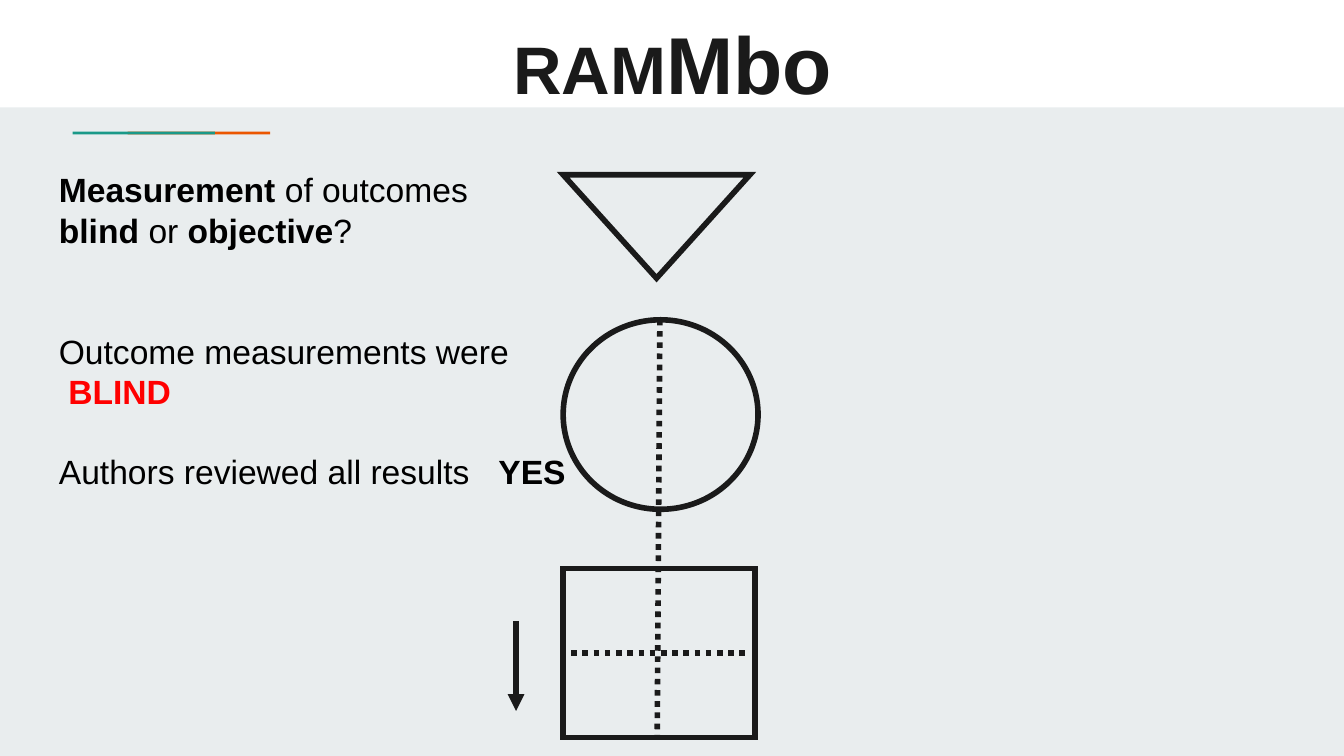
from dataclasses import dataclass

from lxml.etree import SubElement
from pptx import Presentation
from pptx.dml.color import RGBColor
from pptx.enum.dml import MSO_LINE
from pptx.enum.shapes import MSO_CONNECTOR, MSO_SHAPE
from pptx.enum.text import MSO_ANCHOR, PP_ALIGN
from pptx.oxml.ns import qn
from pptx.util import Inches, Pt


@dataclass(frozen=True)
class Theme:
    font: str = "Arial"
    background: str = "E9EDEE"
    band: str = "FFFFFF"
    ink: str = "1A1A1A"
    text: str = "000000"
    answer: str = "FF0000"
    teal: str = "1A9988"
    orange: str = "EB5600"
    title_small: float = 36
    title_large: float = 43.2
    body: float = 18
    stroke: float = 3


THEME = Theme()


def rgb(value):
    return RGBColor.from_string(value)


def add_shape(s, kind, box, fill=None, line=None, rotation=0):
    sp = s.shapes.add_shape(kind, *map(Inches, box))
    sp.shadow.inherit = False
    sp.rotation = rotation
    if fill:
        sp.fill.solid()
        sp.fill.fore_color.rgb = rgb(fill)
    else:
        sp.fill.background()
    if line:
        sp.line.color.rgb = rgb(line)
        sp.line.width = Pt(THEME.stroke)
        SubElement(sp.line._get_or_add_ln(), qn("a:miter"), lim="800000")
    else:
        sp.line.fill.background()
    return sp


def add_line(s, start, end, dash=None, arrow=False):
    sp = s.shapes.add_connector(MSO_CONNECTOR.STRAIGHT, *map(Inches, start + end))
    sp.line.color.rgb = rgb(THEME.ink)
    sp.line.width = Pt(THEME.stroke)
    if dash:
        sp.line.dash_style = dash
    if arrow:
        SubElement(sp.line._get_or_add_ln(), qn("a:tailEnd"), type="triangle")
    SubElement(sp._element.spPr, qn("a:effectLst"))
    return sp


def add_text_box(s, box, anchor=MSO_ANCHOR.TOP, bottom=0.05):
    tf = s.shapes.add_textbox(*map(Inches, box)).text_frame
    tf.word_wrap = True
    tf.vertical_anchor = anchor
    tf.margin_bottom = Inches(bottom)
    return tf


def add_paragraph(tf, align=PP_ALIGN.LEFT, before=0, indent=0, tab=None):
    """Use the frame's empty first paragraph, then append new ones."""
    p = tf.paragraphs[0]
    if p.runs:
        p = tf.add_paragraph()
    p.alignment = align
    p.space_before = Pt(before)
    pPr = p._p.get_or_add_pPr()
    if indent:
        pPr.set("marL", str(Inches(indent)))
    if tab:
        tabs = SubElement(pPr, qn("a:tabLst"))
        SubElement(tabs, qn("a:tab"), pos=str(Inches(tab)), algn="l")
    return p


def add_run(p, text, size=THEME.body, color=THEME.text, bold=False):
    r = p.add_run()
    r.text = text
    r.font.name = THEME.font
    r.font.size = Pt(size)
    r.font.bold = bold
    r.font.color.rgb = rgb(color)


def add_header(s):
    add_shape(s, MSO_SHAPE.RECTANGLE, (0, 0, 10, 0.8), fill=THEME.band)
    for left, color in ((0.95, THEME.orange), (0.54, THEME.teal)):
        add_shape(s, MSO_SHAPE.RECTANGLE, (left, 0.98, 1.06, 0.02), fill=color)
    tf = add_text_box(s, (0.8, 0, 8.41, 0.9), MSO_ANCHOR.BOTTOM, bottom=0.08)
    p = add_paragraph(tf, PP_ALIGN.CENTER)
    for text, size in (("RAM", THEME.title_small), ("Mbo", THEME.title_large)):
        add_run(p, text, size=size, color=THEME.ink, bold=True)


def add_diagram(s):
    for kind, box, rotation in (
        (MSO_SHAPE.ISOSCELES_TRIANGLE, (4.19, 1.3, 1.39, 0.77), 180),
        (MSO_SHAPE.OVAL, (4.19, 2.38, 1.45, 1.41), 0),
        (MSO_SHAPE.RECTANGLE, (4.19, 4.23, 1.43, 1.26), 0),
    ):
        add_shape(s, kind, box, line=THEME.ink, rotation=rotation)
    add_line(s, (4.91, 2.38), (4.89, 5.49), dash=MSO_LINE.ROUND_DOT)
    add_line(s, (4.25, 4.86), (5.58, 4.86), dash=MSO_LINE.ROUND_DOT)
    add_line(s, (3.84, 4.62), (3.84, 5.29), arrow=True)


def add_question(s):
    tf = add_text_box(s, (0.34, 1.21, 8.22, 1.01))
    p = add_paragraph(tf)
    add_run(p, "Measurement ", bold=True)
    add_run(p, "of outcomes")
    p = add_paragraph(tf)
    add_run(p, "blind ", bold=True)
    add_run(p, "or ")
    add_run(p, "objective", bold=True)
    add_run(p, "?")


def add_answers(s):
    tf = add_text_box(s, (0.34, 2.41, 7.16, 1.31))
    add_run(add_paragraph(tf), "Outcome measurements were")
    add_run(add_paragraph(tf, indent=0.07), "BLIND", color=THEME.answer, bold=True)
    p = add_paragraph(tf, before=21.5, tab=3.27)
    add_run(p, "Authors reviewed all results\t")
    add_run(p, "YES", bold=True)


def main():
    prs = Presentation()
    prs.slide_width = Inches(10)
    prs.slide_height = prs.slide_width * 9 // 16
    s = prs.slides.add_slide(prs.slide_layouts[6])
    s.background.fill.solid()
    s.background.fill.fore_color.rgb = rgb(THEME.background)
    add_header(s)
    add_diagram(s)
    add_question(s)
    add_answers(s)
    prs.save("out.pptx")


if __name__ == "__main__":
    main()
